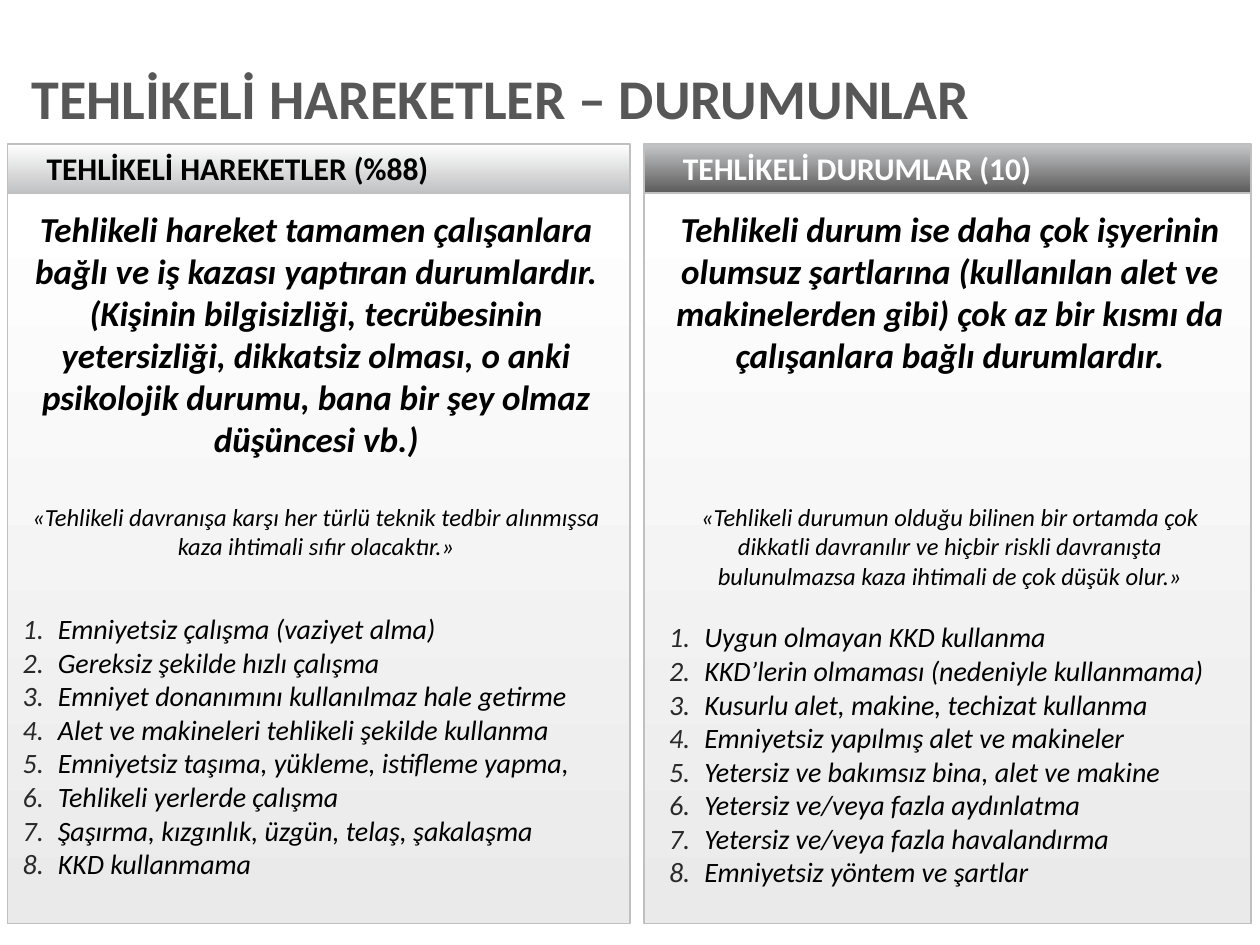
"""Build the slide comparing dangerous acts with dangerous conditions."""
import dataclasses
import typing

import lxml.etree
import pptx
import pptx.dml.color
import pptx.enum.shapes
import pptx.enum.text
import pptx.oxml.ns
import pptx.util

Inches = pptx.util.Inches
Pt = pptx.util.Pt
ALIGN = pptx.enum.text.PP_ALIGN
ANCHOR = pptx.enum.text.MSO_ANCHOR

FONT = "Calibri"
GREY, BLACK, WHITE = "575757", "000000", "FFFFFF"
BORDER, NUMBER = "C0C0C0", "292929"
HEADER_TOP, HEADER_HEIGHT, BODY_HEIGHT = 1.14, 0.39, 5.8
HANGING = 0.28


@dataclasses.dataclass(frozen=True)
class Column:
    left: float
    width: float
    heading: str
    heading_color: str
    heading_gradient: tuple[str, str]
    definition: str
    quote: str
    quote_gap: float
    list_gap: float
    indent: float
    items: tuple[str, ...]


COLUMNS = (
    Column(
        0.06, 4.94, "TEHLİKELİ HAREKETLER (%88)", BLACK, (WHITE, "C1C2C3"),
        "Tehlikeli hareket tamamen çalışanlara bağlı ve iş kazası yaptıran durumlardır. "
        "(Kişinin bilgisizliği, tecrübesinin yetersizliği, dikkatsiz olması, o anki "
        "psikolojik durumu, bana bir şey olmaz düşüncesi vb.)",
        "«Tehlikeli davranışa karşı her türlü teknik tedbir alınmışsa "
        "kaza ihtimali sıfır olacaktır.»",
        24, 29, 0,
        (
            "Emniyetsiz çalışma (vaziyet alma)",
            "Gereksiz şekilde hızlı çalışma",
            "Emniyet donanımını kullanılmaz hale getirme",
            "Alet ve makineleri tehlikeli şekilde kullanma",
            "Emniyetsiz taşıma, yükleme, istifleme yapma,",
            "Tehlikeli yerlerde çalışma",
            "Şaşırma, kızgınlık, üzgün, telaş, şakalaşma",
            "KKD kullanmama",
        ),
    ),
    Column(
        5.11, 4.82, "TEHLİKELİ DURUMLAR (10)", WHITE, ("C6C7C8", "5C5C5D"),
        "Tehlikeli durum ise daha çok işyerinin olumsuz şartlarına (kullanılan alet ve "
        "makinelerden gibi) çok az bir kısmı da çalışanlara bağlı durumlardır.",
        "«Tehlikeli durumun olduğu bilinen bir ortamda çok dikkatli davranılır ve hiçbir "
        "riskli davranışta bulunulmazsa kaza ihtimali de çok düşük olur.»",
        72, 17, 0.08,
        (
            "Uygun olmayan KKD kullanma",
            "KKD’lerin olmaması (nedeniyle kullanmama)",
            "Kusurlu alet, makine, techizat kullanma",
            "Emniyetsiz yapılmış alet ve makineler",
            "Yetersiz ve bakımsız bina, alet ve makine",
            "Yetersiz ve/veya fazla aydınlatma",
            "Yetersiz ve/veya fazla havalandırma",
            "Emniyetsiz yöntem ve şartlar",
        ),
    ),
)


def rgb(value: str) -> pptx.dml.color.RGBColor:
    """Turn a hex string into a colour."""
    return pptx.dml.color.RGBColor.from_string(value)


def apply_format(target: typing.Any, values: dict[str, typing.Any]) -> None:
    """Set each named attribute on the target."""
    for name, value in values.items():
        setattr(target, name, value)


def format_frame(frame: typing.Any, anchor: typing.Any, margins: tuple[float, ...]) -> None:
    """Wrap a text frame and set its anchor and left, top, right and bottom margins."""
    sides = ("margin_left", "margin_top", "margin_right", "margin_bottom")
    apply_format(frame, {
        "word_wrap": True,
        "auto_size": pptx.enum.text.MSO_AUTO_SIZE.NONE,
        "vertical_anchor": anchor,
        **{side: Inches(margin) for side, margin in zip(sides, margins)},
    })


def add_run(paragraph: typing.Any, text: str, size: float, color: str,
            bold: bool = True, italic: bool = False) -> None:
    """Append a formatted run to a paragraph."""
    run = paragraph.add_run()
    run.text = text
    apply_format(run.font, {"name": FONT, "size": Pt(size), "bold": bold, "italic": italic})
    run.font.color.rgb = rgb(color)


def format_indent(paragraph: typing.Any, left: float, first: float = 0) -> typing.Any:
    """Set the paragraph indents and return its properties element."""
    properties = paragraph._p.get_or_add_pPr()
    properties.set("marL", str(Inches(left)))
    properties.set("indent", str(Inches(first)))
    return properties


def number_paragraph(paragraph: typing.Any, indent: float) -> None:
    """Give a paragraph an automatic number with a hanging indent."""
    properties = format_indent(paragraph, indent + HANGING, -HANGING)
    qualified = pptx.oxml.ns.qn
    color = lxml.etree.SubElement(properties, qualified("a:buClr"))
    lxml.etree.SubElement(color, qualified("a:srgbClr"), val=NUMBER)
    lxml.etree.SubElement(properties, qualified("a:buFont"), typeface="+mj-lt")
    lxml.etree.SubElement(properties, qualified("a:buAutoNum"), type="arabicPeriod")


def add_panel(slide: typing.Any, column: Column, top: float, height: float,
              gradient: tuple[str, str]) -> typing.Any:
    """Add a bordered rectangle with a vertical gradient and return its text frame."""
    shape = slide.shapes.add_shape(
        pptx.enum.shapes.MSO_SHAPE.RECTANGLE,
        Inches(column.left), Inches(top), Inches(column.width), Inches(height))
    shape.shadow.inherit = False
    shape.fill.gradient()
    shape.fill.gradient_angle = 270
    for stop, color in zip(shape.fill.gradient_stops, gradient):
        stop.color.rgb = rgb(color)
    shape.line.color.rgb = rgb(BORDER)
    shape.line.width = Pt(1)
    return shape.text_frame


def add_column(slide: typing.Any, column: Column) -> None:
    """Draw a heading bar and the body panel below it."""
    heading = add_panel(slide, column, HEADER_TOP, HEADER_HEIGHT, column.heading_gradient)
    format_frame(heading, ANCHOR.MIDDLE, (0.31, 0, 0, 0))
    heading.paragraphs[0].alignment = ALIGN.LEFT
    add_run(heading.paragraphs[0], column.heading, 18, column.heading_color)

    body = add_panel(slide, column, HEADER_TOP + HEADER_HEIGHT, BODY_HEIGHT, (WHITE, "EAEAEA"))
    format_frame(body, ANCHOR.TOP, (0.12, 0.12, 0.16, 0.08))
    definition, quote = body.paragraphs[0], body.add_paragraph()
    for paragraph in (definition, quote):
        format_indent(paragraph, column.indent)
        paragraph.alignment = ALIGN.CENTER
    quote.space_before = Pt(column.quote_gap)
    add_run(definition, column.definition, 20, BLACK, italic=True)
    add_run(quote, column.quote, 14, BLACK, bold=False, italic=True)
    for index, item in enumerate(column.items):
        paragraph = body.add_paragraph()
        number_paragraph(paragraph, column.indent)
        apply_format(paragraph, {
            "alignment": ALIGN.LEFT,
            "space_before": Pt(0 if index else column.list_gap),
        })
        add_run(paragraph, item, 16, BLACK, bold=False, italic=True)


def add_title(slide: typing.Any) -> None:
    """Place and format the slide title."""
    title = slide.shapes.title
    apply_format(title, {
        "left": Inches(0.25), "top": Inches(0.45),
        "width": Inches(9.64), "height": Inches(0.71),
    })
    format_frame(title.text_frame, ANCHOR.MIDDLE, (0, 0.05, 0, 0.05))
    paragraph = title.text_frame.paragraphs[0]
    apply_format(paragraph, {"alignment": ALIGN.LEFT, "line_spacing": 0.9})
    add_run(paragraph, "TEHLİKELİ HAREKETLER – DURUMUNLAR", 32, GREY)


def main() -> None:
    """Create and save the presentation."""
    presentation = pptx.Presentation()
    apply_format(presentation, {"slide_width": Inches(10), "slide_height": Inches(7.5)})
    slide = presentation.slides.add_slide(presentation.slide_layouts.get_by_name("Title Only"))
    for column in COLUMNS:
        add_column(slide, column)
    add_title(slide)
    presentation.save("out.pptx")


if __name__ == "__main__":
    main()
